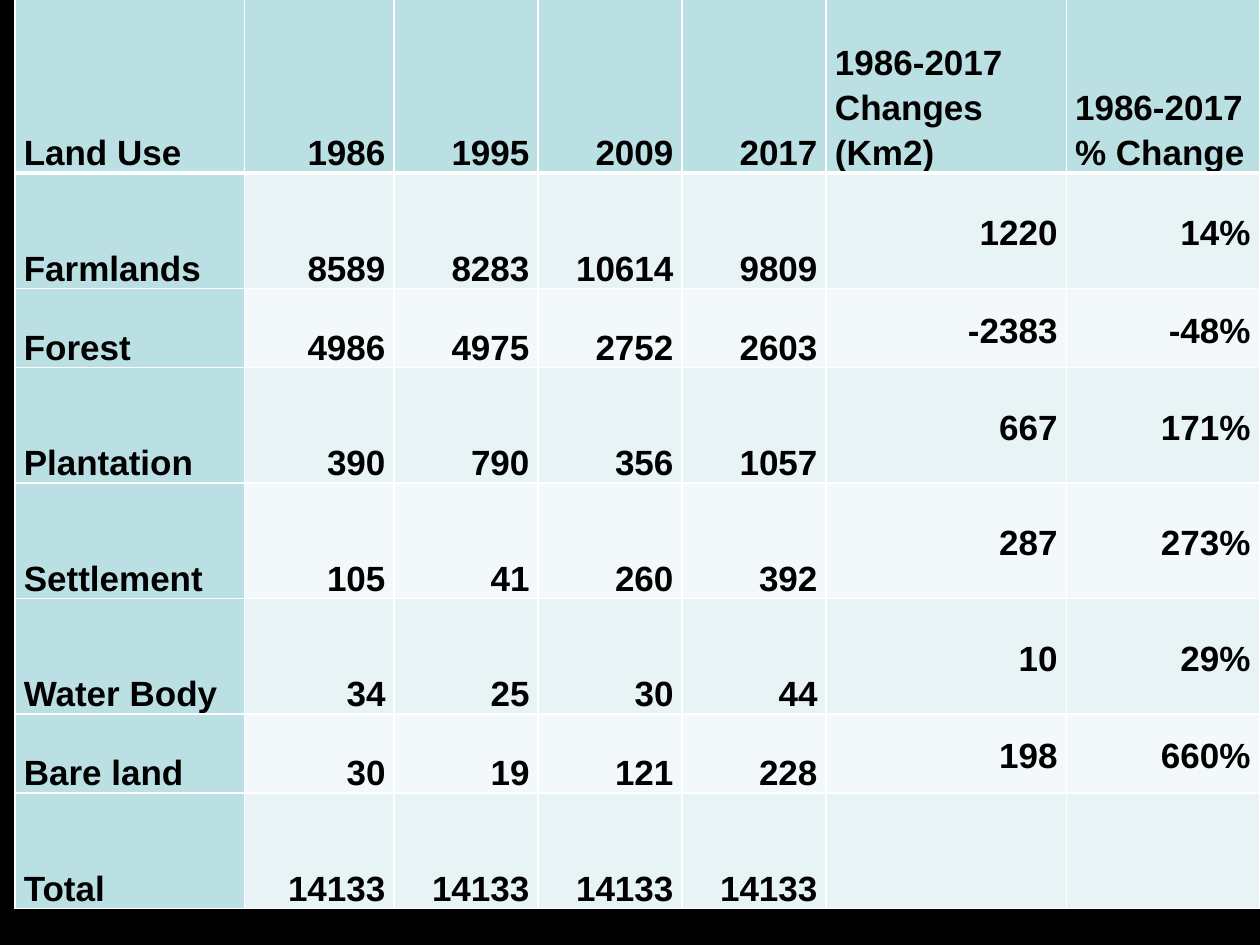
from lxml import etree
from pptx import Presentation
from pptx.dml.color import RGBColor
from pptx.enum import text
from pptx.oxml import ns
from pptx.util import Pt

BLACK = RGBColor(0x00, 0x00, 0x00)
WHITE = RGBColor(0xFF, 0xFF, 0xFF)
HEADER_TEAL = RGBColor(0xBB, 0xE0, 0xE3)
BAND_FILLS = (RGBColor(0xE7, 0xF3, 0xF4), RGBColor(0xF3, 0xF9, 0xFA))

FIRST_CHANGE_COLUMN = 5
COLUMN_WIDTHS = (131, 85.7, 82.3, 82.3, 82.3, 137.2, 110.3)
ROW_HEIGHTS = (100, 66, 45.2, 66, 66, 66, 45.2, 66)
LAND_USE = (
    ("Land Use", "1986", "1995", "2009", "2017",
     "1986-2017 Changes (Km2)", "1986-2017 % Change"),
    ("Farmlands", "8589", "8283", "10614", "9809", "1220", "14%"),
    ("Forest", "4986", "4975", "2752", "2603", "-2383", "-48%"),
    ("Plantation", "390", "790", "356", "1057", "667", "171%"),
    ("Settlement", "105", "41", "260", "392", "287", "273%"),
    ("Water Body", "34", "25", "30", "44", "10", "29%"),
    ("Bare land", "30", "19", "121", "228", "198", "660%"),
    ("Total", "14133", "14133", "14133", "14133", "", ""),
)


def set_borders(cell, widths):
    """Draw white borders; widths maps each side (L, R, T, B) to points.

    Call before filling the cell: the schema puts lines ahead of the fill.
    """
    properties = cell._tc.get_or_add_tcPr()
    for side, width in widths.items():
        line = etree.SubElement(properties, ns.qn(f"a:ln{side}"), w=str(Pt(width)))
        fill = etree.SubElement(line, ns.qn("a:solidFill"))
        etree.SubElement(fill, ns.qn("a:srgbClr"), val=str(WHITE))


def cell_fill(row, column):
    if row == 0 or column == 0:
        return HEADER_TEAL
    return BAND_FILLS[(row - 1) % 2]


def write_cell(cell, value, row, column):
    is_change = column >= FIRST_CHANGE_COLUMN
    is_left = column == 0 or (row == 0 and is_change)
    cell.margin_left = cell.margin_right = Pt(5)
    cell.margin_top = cell.margin_bottom = 0
    cell.vertical_anchor = (text.MSO_ANCHOR.MIDDLE if is_change and row > 0
                            else text.MSO_ANCHOR.BOTTOM)
    cell.text = value
    paragraph = cell.text_frame.paragraphs[0]
    paragraph.alignment = text.PP_ALIGN.LEFT if is_left else text.PP_ALIGN.RIGHT
    paragraph.line_spacing = 1.15
    font = paragraph.font
    font.name = "Arial"
    font.size = Pt(20)
    font.bold = True
    font.color.rgb = BLACK


def add_land_use_table(slide):
    frame = slide.shapes.add_table(
        len(ROW_HEIGHTS), len(COLUMN_WIDTHS), Pt(8.6), Pt(-1.2),
        Pt(sum(COLUMN_WIDTHS)), Pt(sum(ROW_HEIGHTS)))
    table = frame.table
    for column, width in zip(table.columns, COLUMN_WIDTHS):
        column.width = Pt(width)
    for row, height in zip(table.rows, ROW_HEIGHTS):
        row.height = Pt(height)
    for row, values in enumerate(LAND_USE):
        for column, value in enumerate(values):
            cell = table.cell(row, column)
            write_cell(cell, value, row, column)
            set_borders(cell, {"L": 1, "R": 1,
                               "T": 3 if row == 1 else 1,
                               "B": 3 if row == 0 else 1})
            cell.fill.solid()
            cell.fill.fore_color.rgb = cell_fill(row, column)


def main():
    presentation = Presentation()
    presentation.slide_width = Pt(720)
    presentation.slide_height = Pt(540)
    slide = presentation.slides.add_slide(presentation.slide_layouts[6])
    slide.background.fill.solid()
    slide.background.fill.fore_color.rgb = BLACK
    add_land_use_table(slide)
    presentation.save("out.pptx")


if __name__ == "__main__":
    main()
